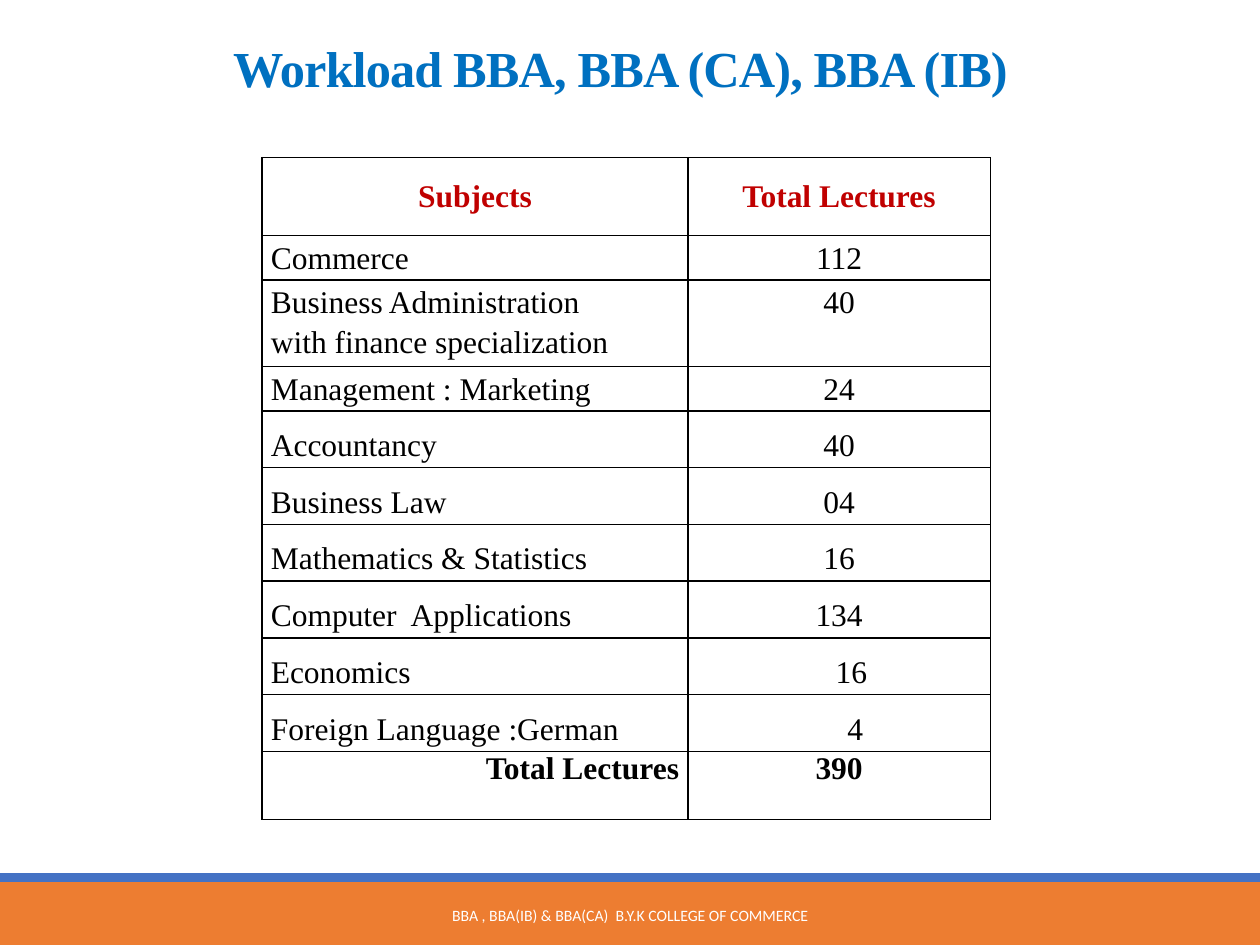
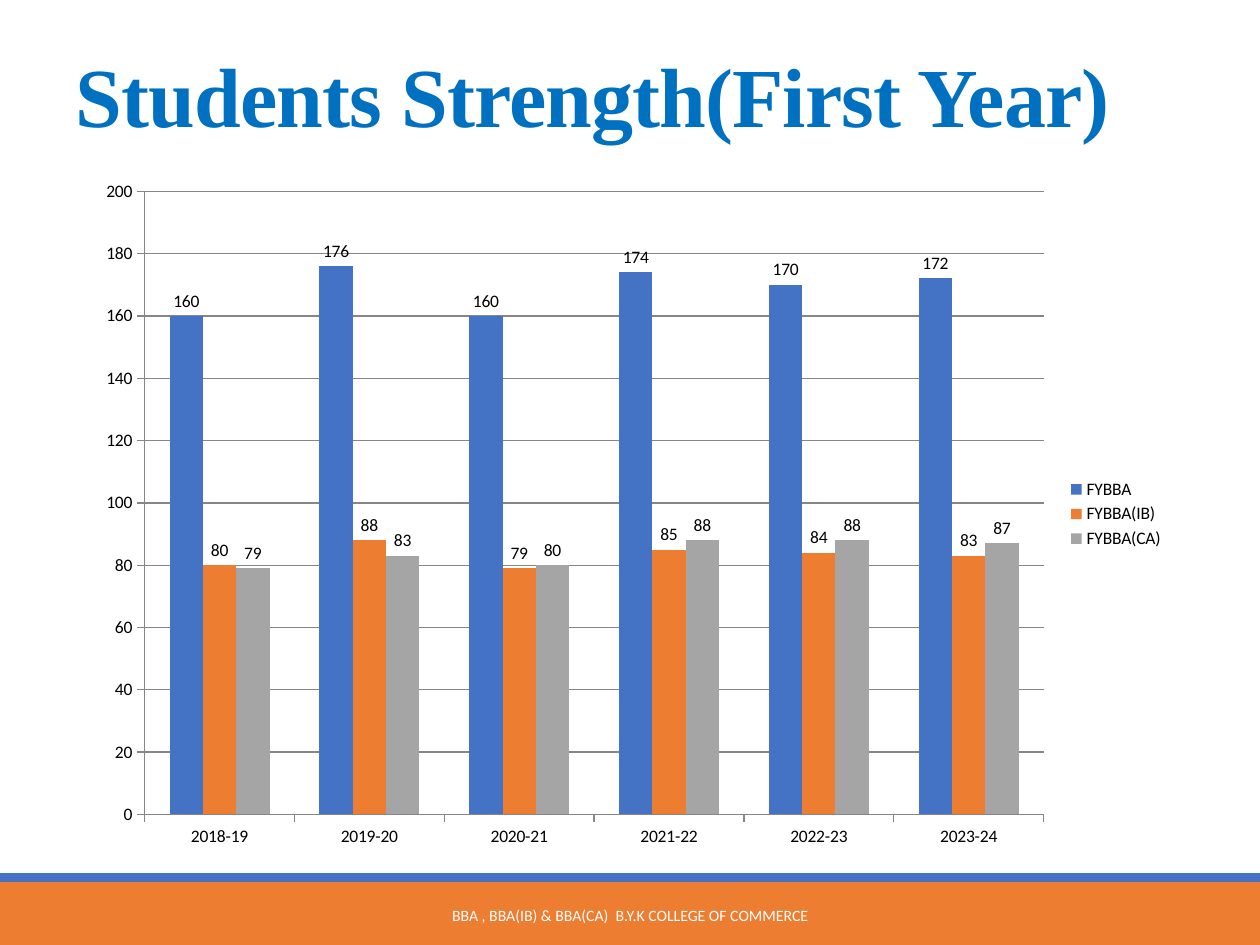
from dataclasses import dataclass

from lxml import etree
from pptx import Presentation
from pptx import util as u
from pptx.chart.data import CategoryChartData
from pptx.dml.color import RGBColor
from pptx.enum import chart as ch
from pptx.enum import shapes, text
from pptx.oxml.ns import qn

COLOURS = {
    "blue": "4472C4", "orange": "ED7D31", "grey": "A5A5A5", "axis": "868686",
    "title": "0070C0", "heading": "C00000", "black": "000000", "white": "FFFFFF",
}
SERIF, SANS = "Times New Roman", "Calibri"
WIDTH, HEIGHT = u.Inches(10), u.Inches(7.5)
FOOTER = "BBA , BBA(IB) & BBA(CA)  B.Y.K COLLEGE OF COMMERCE"
LEFT, CENTRE, RIGHT = text.PP_ALIGN.LEFT, text.PP_ALIGN.CENTER, text.PP_ALIGN.RIGHT


@dataclass(frozen=True)
class Area:
    """A rectangle in percent of the slide's width and height."""
    left: float
    top: float
    width: float
    height: float

    def box(self) -> tuple[int, int, int, int]:
        return (across(self.left), down(self.top),
                across(self.width), down(self.height))


@dataclass(frozen=True)
class Band:
    area: Area
    colour: str


@dataclass(frozen=True)
class Row:
    subject: str
    lectures: str
    height: float  # percent of the slide's height
    spacing: float = 1.5
    colour: str = "black"
    bold: bool = False
    align: text.PP_ALIGN = LEFT
    anchor: text.MSO_ANCHOR = text.MSO_ANCHOR.TOP


BANDS = [Band(Area(0, 93.33, 100, 6.67), "orange"),
         Band(Area(0, 92.4, 100, 0.93), "blue")]
FOOTER_AREA = Area(30.2, 94.13, 39.6, 5.33)

ROWS = [
    Row("Subjects", "Total Lectures", 8.27, 1, "heading", True, CENTRE,
        text.MSO_ANCHOR.MIDDLE),
    Row("Commerce", "112", 4.67, 1.15),
    Row("Business Administration\nwith finance specialization", "40", 8.27, 1.15),
    Row("Management : Marketing", "24", 4.67, 1.15),
    Row("Accountancy", "40", 5.33),
    Row("Business Law", "04", 5.33),
    Row("Mathematics & Statistics", "16", 5.33),
    Row("Computer  Applications", "134", 5.33),
    Row("Economics", "\t16", 5.33),
    Row("Foreign Language :German", "\t4", 5.33),
    Row("Total Lectures", "390", 7.2, 1, bold=True, align=RIGHT),
]
COLUMN_WIDTHS = [33.8, 24]

YEARS = ["2018-19", "2019-20", "2020-21", "2021-22", "2022-23", "2023-24"]
STRENGTH = {
    "FYBBA": ("blue", [160, 176, 160, 174, 170, 172]),
    "FYBBA(IB)": ("orange", [80, 88, 79, 85, 84, 83]),
    "FYBBA(CA)": ("grey", [79, 83, 80, 88, 88, 87]),
}


def across(percent: float) -> int:
    return round(WIDTH * percent / 100)


def down(percent: float) -> int:
    return round(HEIGHT * percent / 100)


def rgb(name: str) -> RGBColor:
    return RGBColor.from_string(COLOURS[name])


def style(font, size: float, colour: str, face: str, bold: bool = False) -> None:
    font.size, font.name, font.bold = u.Pt(size), face, bold
    font.color.rgb = rgb(colour)


def add_page(deck, title: str, area: Area, size: float):
    """Add a page with the shared bands, footer and title style."""
    page = deck.slides.add_slide(deck.slide_layouts[5])
    for band in BANDS:
        shape = page.shapes.add_shape(shapes.MSO_SHAPE.RECTANGLE, *band.area.box())
        shape.shadow.inherit = False
        shape.fill.solid()
        shape.fill.fore_color.rgb = rgb(band.colour)
        shape.line.fill.background()

    frame = page.shapes.add_textbox(*FOOTER_AREA.box()).text_frame
    frame.word_wrap = True
    frame.vertical_anchor = text.MSO_ANCHOR.MIDDLE
    para = frame.paragraphs[0]
    para.text, para.alignment = FOOTER, CENTRE
    style(para.font, 9, "white", SANS)

    heading = page.shapes.title
    heading.left, heading.top, heading.width, heading.height = area.box()
    frame = heading.text_frame
    frame.auto_size = text.MSO_AUTO_SIZE.NONE
    frame.vertical_anchor = text.MSO_ANCHOR.BOTTOM
    para = frame.paragraphs[0]
    para.text, para.alignment, para.line_spacing = title, LEFT, 0.85
    style(para.font, size, "title", SERIF, True)
    para._p.pPr.find(qn("a:defRPr")).set("spc", "-50")
    return page


def add_borders(cell) -> None:
    properties = cell._tc.get_or_add_tcPr()
    for side in ("lnL", "lnR", "lnT", "lnB"):
        line = etree.SubElement(properties, qn(f"a:{side}"), w=str(u.Pt(1)))
        fill = etree.SubElement(line, qn("a:solidFill"))
        etree.SubElement(fill, qn("a:srgbClr"), val=COLOURS["black"])


def fill_cell(cell, words: str, row: Row, align: text.PP_ALIGN) -> None:
    add_borders(cell)
    cell.fill.background()
    cell.margin_left = cell.margin_right = u.Inches(0.07)
    cell.margin_top = cell.margin_bottom = 0
    cell.vertical_anchor = row.anchor
    cell.text_frame.text = words
    for para in cell.text_frame.paragraphs:
        para.alignment, para.line_spacing = align, row.spacing
        if words.startswith("\t"):
            stops = etree.SubElement(para._p.get_or_add_pPr(), qn("a:tabLst"))
            etree.SubElement(stops, qn("a:tab"), pos=str(u.Inches(0.32)), algn="ctr")
        style(para.font, 18, row.colour, SERIF, row.bold)


def add_workload(page) -> None:
    area = Area(20.8, 16.67, sum(COLUMN_WIDTHS), sum(row.height for row in ROWS))
    table = page.shapes.add_table(len(ROWS), len(COLUMN_WIDTHS), *area.box()).table
    table.first_row = table.horz_banding = False
    for column, width in zip(table.columns, COLUMN_WIDTHS):
        column.width = across(width)
    for index, row in enumerate(ROWS):
        table.rows[index].height = down(row.height)
        fill_cell(table.cell(index, 0), row.subject, row, row.align)
        fill_cell(table.cell(index, 1), row.lectures, row, CENTRE)


def add_strength(page) -> None:
    data = CategoryChartData()
    data.categories = YEARS
    for name, (_, values) in STRENGTH.items():
        data.add_series(name, values)
    area = Area(6.7, 17.73, 86.7, 73.33)
    chart = page.shapes.add_chart(
        ch.XL_CHART_TYPE.COLUMN_CLUSTERED, *area.box(), data).chart
    style(chart.font, 10, "black", SANS)
    chart.has_title = False
    chart.has_legend = True
    chart.legend.position = ch.XL_LEGEND_POSITION.RIGHT
    chart.legend.include_in_layout = False

    # Columns with their values
    plot = chart.plots[0]
    plot.vary_by_categories = False
    plot.gap_width, plot.overlap = 150, 0
    for series, (colour, _) in zip(plot.series, STRENGTH.values()):
        series.format.fill.solid()
        series.format.fill.fore_color.rgb = rgb(colour)
        labels = series.data_labels
        labels.show_value = True
        labels.position = ch.XL_LABEL_POSITION.OUTSIDE_END

    # Axes and gridlines
    values = chart.value_axis
    values.minimum_scale, values.maximum_scale, values.major_unit = 0, 200, 20
    values.has_major_gridlines = True
    for axis in (values, chart.category_axis):
        axis.major_tick_mark = ch.XL_TICK_MARK.OUTSIDE
        axis.minor_tick_mark = ch.XL_TICK_MARK.NONE
    for part in (values, chart.category_axis, values.major_gridlines):
        part.format.line.color.rgb = rgb("axis")
        part.format.line.width = u.Pt(0.75)


def main() -> None:
    deck = Presentation()
    deck.slide_width, deck.slide_height = WIDTH, HEIGHT
    add_workload(add_page(deck, "Workload BBA, BBA (CA), BBA (IB)",
                          Area(17.5, 4.13, 70, 6.93), 28.8))
    add_strength(add_page(deck, "Students Strength(First Year)",
                          Area(5, 3.33, 90, 12.67), 48))
    deck.save("out.pptx")


if __name__ == "__main__":
    main()
